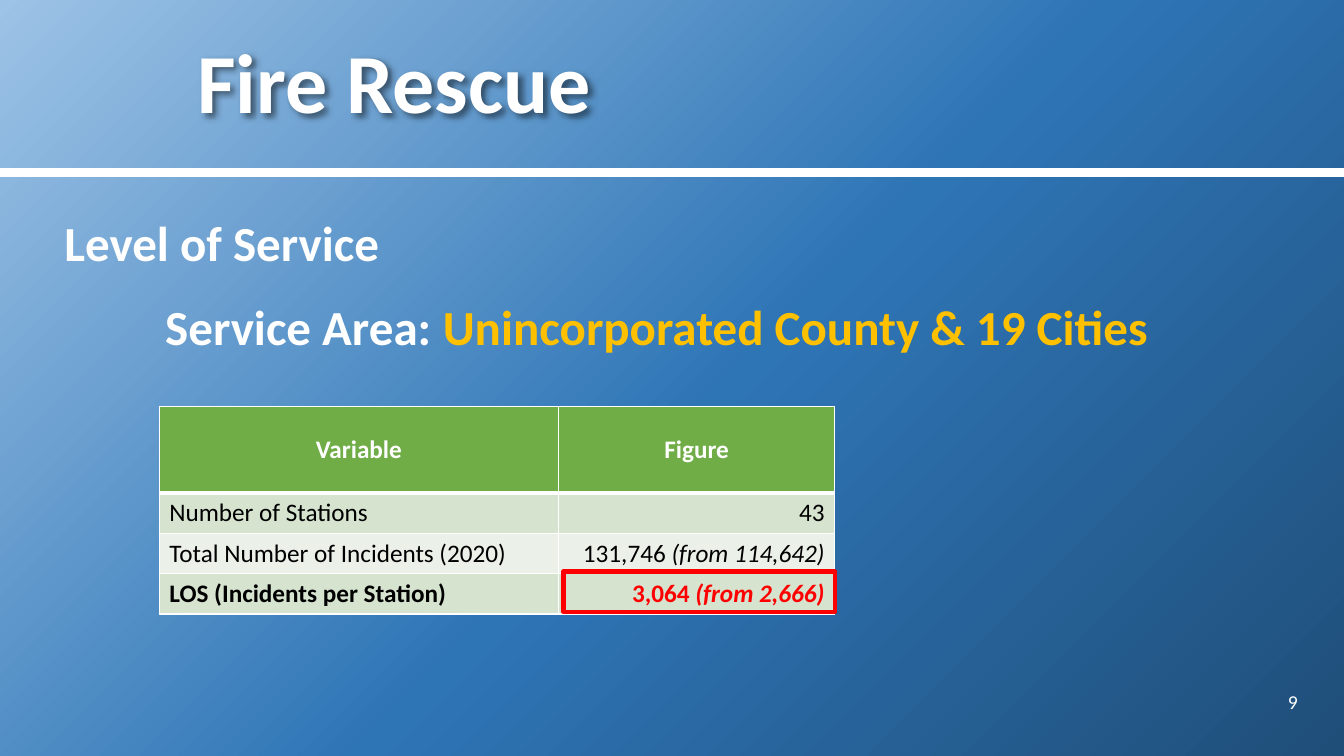
from pptx import Presentation
from pptx.dml.color import RGBColor
from pptx.enum.shapes import MSO_CONNECTOR, MSO_SHAPE
from pptx.enum.text import MSO_ANCHOR, PP_ALIGN
from pptx.oxml import parse_xml
from pptx.oxml.ns import nsdecls, qn
from pptx.util import Inches, Pt

LEFT, CENTER, RIGHT = PP_ALIGN.LEFT, PP_ALIGN.CENTER, PP_ALIGN.RIGHT
TOP, MIDDLE = MSO_ANCHOR.TOP, MSO_ANCHOR.MIDDLE
STRAIGHT, RECTANGLE = MSO_CONNECTOR.STRAIGHT, MSO_SHAPE.RECTANGLE

COLORS = {
    "white": "FFFFFF", "black": "000000", "gold": "FFC000", "red": "FF0000",
    "header": "70AD47", "band": "D5E3CF", "band_light": "EBF1E9",
    "bg_light": "9DC3E6", "bg_mid": "2E75B6", "bg_dark": "1F4E79",
}
ROWS = [
    ("Number of Stations", ["43"], {}),
    ("Total Number of Incidents (2020)", ["131,746 ", "(from 114,642)"], {}),
    ("LOS (Incidents per Station)", ["3,064 ", "(from 2,666)"], {"bold": True}),
]


def rgb(name):
    return RGBColor.from_string(COLORS[name])


def add_run(p, text, color, **formats):
    r = p.add_run()
    r.text = text
    r.font.color.rgb = rgb(color)
    for name, value in {"name": "Calibri", **formats}.items():
        setattr(r.font, name, value)


def add_text_box(s, box, anchor):
    sp = s.shapes.add_textbox(*map(Inches, box))
    tf = sp.text_frame
    tf.word_wrap = True
    tf.vertical_anchor = anchor
    return sp


def add_background(s):
    stops = "".join(
        f'<a:gs pos="{pos * 1000}"><a:srgbClr val="{COLORS[name]}"/></a:gs>'
        for pos, name in [(0, "bg_light"), (53, "bg_mid"), (100, "bg_dark")])
    s.background.fill.gradient()
    grad = s.element.find(".//" + qn("a:gradFill"))
    grad.getparent().replace(grad, parse_xml(
        f'<a:gradFill {nsdecls("a")} rotWithShape="1"><a:gsLst>{stops}</a:gsLst>'
        '<a:path path="circle"><a:fillToRect r="100000" b="100000"/></a:path>'
        '</a:gradFill>'))


def add_header(s, box):
    left, top, width, height = box
    y = Inches(top + height)
    rule = s.shapes.add_connector(STRAIGHT, Inches(left), y, Inches(left + width), y)
    rule.line.color.rgb = rgb("white")
    rule.line.width = Pt(6)
    rule._element.spPr.append(parse_xml(f'<a:effectLst {nsdecls("a")}/>'))
    sp = add_text_box(s, (left + 1.88, top, 11.1, height), MIDDLE)
    sp._element.spPr.append(parse_xml(
        f'<a:effectLst {nsdecls("a")}>'
        '<a:outerShdw blurRad="50800" dist="38100" dir="2700000" algn="tl" rotWithShape="0">'
        '<a:srgbClr val="000000"><a:alpha val="50000"/></a:srgbClr>'
        '</a:outerShdw></a:effectLst>'))
    p = sp.text_frame.paragraphs[0]
    p.line_spacing = 0.9
    add_run(p, "Fire Rescue", "white", size=Pt(60), bold=True)


def add_body(s, box):
    tf = add_text_box(s, box, TOP).text_frame
    formats = {"size": Pt(35), "bold": True}
    p = tf.paragraphs[0]
    p.line_spacing = 1.2
    add_run(p, "Level of Service", "white", **formats)
    p = tf.add_paragraph()
    p.line_spacing = 1.2
    p.space_before = Pt(10)
    p._p.get_or_add_pPr().set("marL", str(Inches(1)))
    add_run(p, "Service Area: ", "white", **formats)
    add_run(p, "Unincorporated County & 19 Cities", "gold", **formats)


def set_borders(cell, top, bottom):
    tc_pr = cell._tc.get_or_add_tcPr()
    widths = {"lnL": 1, "lnR": 1, "lnT": top, "lnB": bottom}
    for i, (tag, width) in enumerate(widths.items()):
        tc_pr.insert(i, parse_xml(
            f'<a:{tag} {nsdecls("a")} w="{Pt(width)}"><a:solidFill>'
            f'<a:srgbClr val="{COLORS["white"]}"/></a:solidFill></a:{tag}>'))


def format_cell(cell, fill, align, anchor, top=1, bottom=1):
    cell.fill.solid()
    cell.fill.fore_color.rgb = rgb(fill)
    cell.vertical_anchor = anchor
    set_borders(cell, top, bottom)
    p = cell.text_frame.paragraphs[0]
    p.alignment = align
    return p


def add_service_table(s, box):
    left, top, width, height = box
    header_height, label_width = 0.86, 3.96
    row_height = (height - header_height) / len(ROWS)
    table = s.shapes.add_table(len(ROWS) + 1, 2, *map(Inches, box)).table
    for column, w in zip(table.columns, (label_width, width - label_width)):
        column.width = Inches(w)
    for i, row in enumerate(table.rows):
        row.height = Inches(row_height if i else header_height)
    for c, text in enumerate(("Variable", "Figure")):
        p = format_cell(table.cell(0, c), "header", CENTER, MIDDLE, bottom=3)
        add_run(p, text, "white", size=Pt(18), bold=True)
    for i, (label, figures, extra) in enumerate(ROWS, 1):
        fill = "band" if i % 2 else "band_light"
        formats = {"size": Pt(18), "bold": False, **extra}
        edge = 3 if i == 1 else 1
        p = format_cell(table.cell(i, 0), fill, LEFT, TOP, top=edge)
        add_run(p, label, "black", **formats)
        p = format_cell(table.cell(i, 1), fill, RIGHT, TOP, top=edge)
        for k, text in enumerate(figures):
            add_run(p, text, "red" if extra else "black", italic=k > 0, **formats)
    mark = s.shapes.add_shape(RECTANGLE, Inches(left + 4.01), Inches(top + 1.64),
                              Inches(2.69), Inches(row_height))
    mark.shadow.inherit = False
    mark.fill.background()
    mark.line.color.rgb = rgb("red")
    mark.line.width = Pt(3.25)


def add_page_number(s, box):
    p = add_text_box(s, box, MIDDLE).text_frame.paragraphs[0]
    p.alignment = RIGHT
    add_run(p, "9", "white", size=Pt(14))


def main():
    prs = Presentation()
    prs.slide_width, prs.slide_height = Inches(13.33), Inches(7.5)
    s = prs.slides.add_slide(prs.slide_layouts[6])
    add_background(s)
    add_header(s, (-0.02, 0, 13.35, 1.71))
    add_page_number(s, (12.08, 6.76, 0.89, 0.4))
    add_service_table(s, (1.58, 4.03, 6.7, 2.06))
    add_body(s, (0.54, 1.94, 11.65, 1.81))
    prs.save("out.pptx")


if __name__ == "__main__":
    main()
